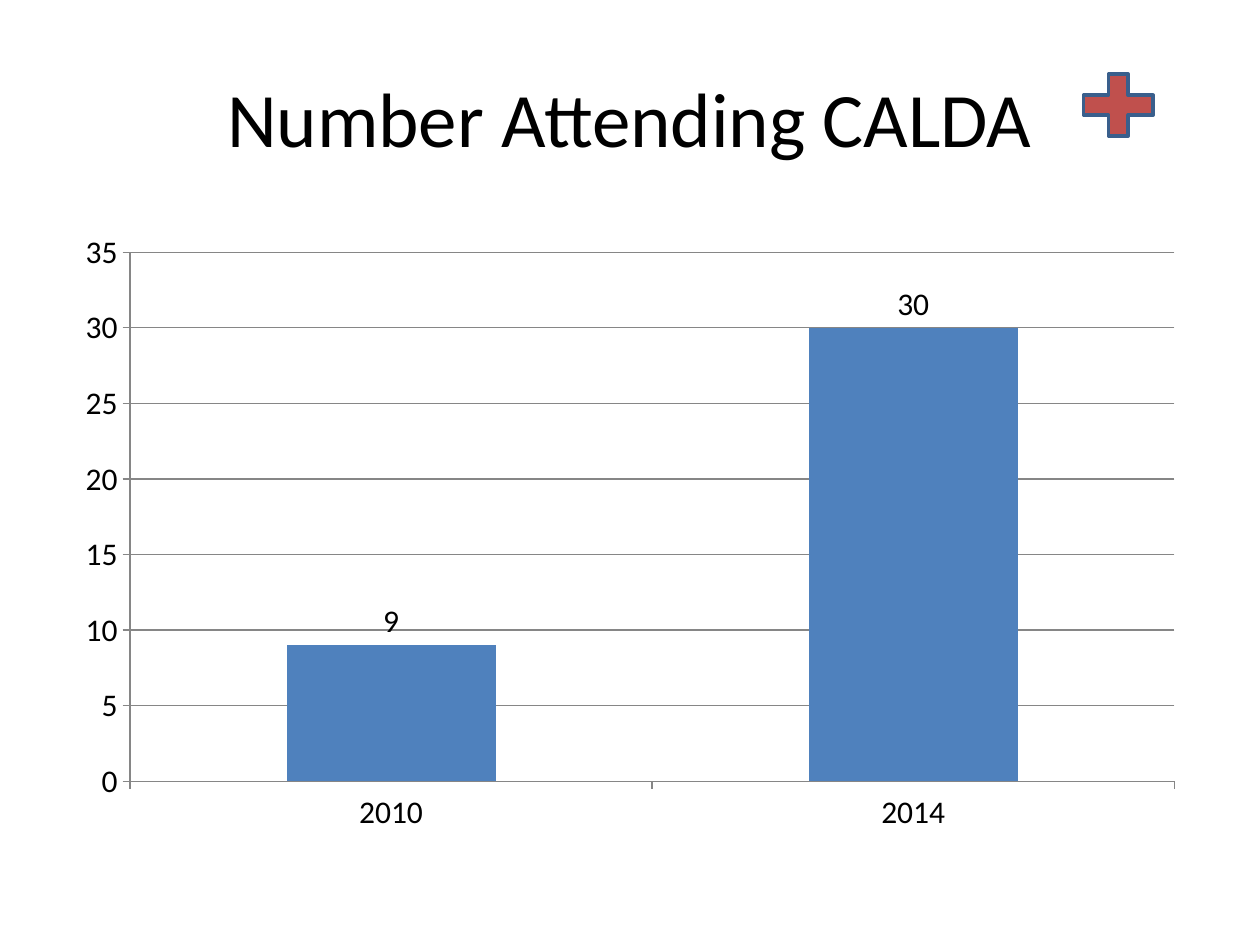
from typing import NamedTuple

from pptx import Presentation
from pptx.chart.data import CategoryChartData
from pptx.dml.color import RGBColor
from pptx.enum.chart import XL_CHART_TYPE as ChartType
from pptx.enum.chart import XL_LABEL_POSITION as LabelPos
from pptx.enum.chart import XL_TICK_MARK as Tick
from pptx.enum.shapes import MSO_SHAPE as Shape
from pptx.enum.text import MSO_ANCHOR as Anchor
from pptx.enum.text import PP_ALIGN as Align
from pptx.slide import Slide
from pptx.util import Cm, Pt

BLACK = RGBColor(0x00, 0x00, 0x00)
BLUE = RGBColor(0x4F, 0x81, 0xBD)
DARK_BLUE = RGBColor(0x3A, 0x5F, 0x8C)
RED = RGBColor(0xC0, 0x50, 0x4D)
GRAY = RGBColor(0x86, 0x86, 0x86)
FONT = "Calibri"


class Box(NamedTuple):
    left: Cm
    top: Cm
    width: Cm
    height: Cm


class Attendance(NamedTuple):
    year: str
    people: int


TITLE_BOX = Box(Cm(1.27), Cm(0.76), Cm(22.86), Cm(3.18))
CHART_BOX = Box(Cm(1.27), Cm(4.45), Cm(22.86), Cm(12.57))
PLUS_BOX = Box(Cm(21.59), Cm(1.27), Cm(1.91), Cm(1.7))
ATTENDANCE = [Attendance("2010", 9), Attendance("2014", 30)]


def set_font(font, size: int) -> None:
    font.name = FONT
    font.size = Pt(size)
    font.color.rgb = BLACK


def add_title(s: Slide, text: str) -> None:
    tf = s.shapes.add_textbox(*TITLE_BOX).text_frame
    tf.word_wrap = True
    tf.vertical_anchor = Anchor.MIDDLE
    p = tf.paragraphs[0]
    p.alignment = Align.CENTER
    r = p.add_run()
    r.text = text
    set_font(r.font, 44)


def add_attendance_chart(s: Slide) -> None:
    data = CategoryChartData()
    data.categories = [a.year for a in ATTENDANCE]
    data.add_series("Series 1", [a.people for a in ATTENDANCE])
    chart = s.shapes.add_chart(ChartType.COLUMN_CLUSTERED, *CHART_BOX, data).chart
    chart.has_title = False
    chart.has_legend = False
    set_font(chart.font, 18)

    value_axis = chart.value_axis
    value_axis.minimum_scale = 0
    value_axis.maximum_scale = 35
    value_axis.major_unit = 5
    value_axis.has_major_gridlines = True
    for axis in (chart.category_axis, value_axis):
        axis.major_tick_mark = Tick.OUTSIDE
        axis.minor_tick_mark = Tick.NONE
    for lined in (chart.category_axis, value_axis, value_axis.major_gridlines):
        lined.format.line.color.rgb = GRAY
        lined.format.line.width = Pt(0.75)

    plot = chart.plots[0]
    plot.gap_width = 150
    plot.vary_by_categories = False
    fill = plot.series[0].format.fill
    fill.solid()
    fill.fore_color.rgb = BLUE
    plot.has_data_labels = True
    labels = plot.data_labels
    labels.show_value = True
    labels.position = LabelPos.OUTSIDE_END
    set_font(labels.font, 18)


def add_plus(s: Slide) -> None:
    sp = s.shapes.add_shape(Shape.MATH_PLUS, *PLUS_BOX)
    sp.shadow.inherit = False
    sp.fill.solid()
    sp.fill.fore_color.rgb = RED
    sp.line.color.rgb = DARK_BLUE
    sp.line.width = Pt(2)


def main() -> None:
    prs = Presentation()
    prs.slide_width = Cm(25.4)
    prs.slide_height = Cm(19.05)
    s = prs.slides.add_slide(prs.slide_layouts[6])
    add_title(s, "Number Attending CALDA")
    add_attendance_chart(s)
    add_plus(s)
    prs.save("out.pptx")


if __name__ == "__main__":
    main()
